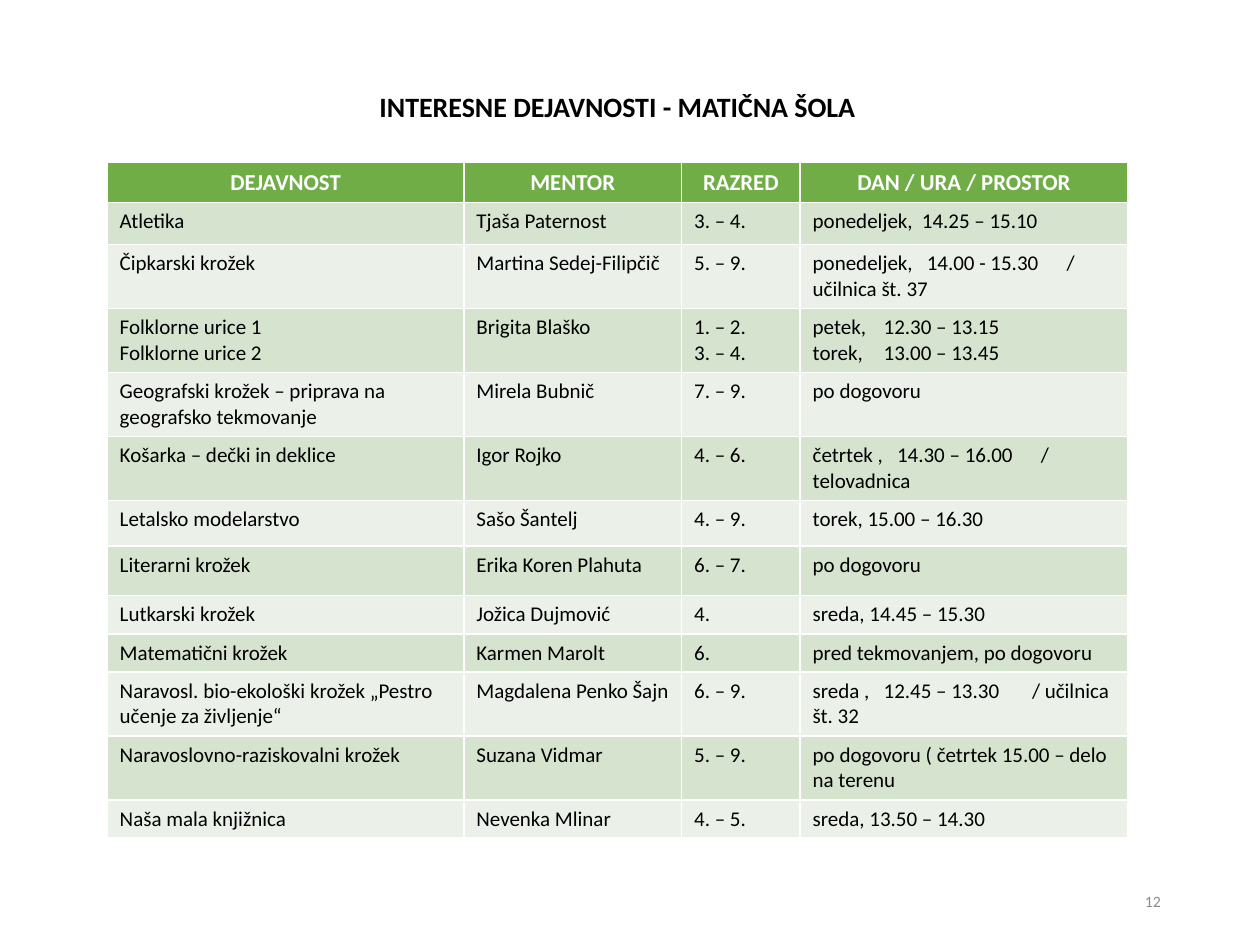
from lxml import etree
from pptx import Presentation
from pptx.dml.color import RGBColor
from pptx.enum import text
from pptx.oxml.ns import qn
from pptx.util import Cm, Pt

FONT = "Calibri"
BLACK = RGBColor(0x00, 0x00, 0x00)
WHITE = RGBColor(0xFF, 0xFF, 0xFF)
GREY = RGBColor(0x8C, 0x8C, 0x8C)
GREEN = RGBColor(0x70, 0xAD, 0x47)
BANDS = (RGBColor(0xEB, 0xF1, 0xE9), RGBColor(0xD5, 0xE3, 0xCF))

COLS = (7.19, 4.39, 2.39, 6.6)
HEAD = ("DEJAVNOST", "MENTOR", "RAZRED", "DAN / URA / PROSTOR")
ONE, TWO = 0.77, 1.29  # heights of rows with one and two lines

# Row height, the four cells, tab stops of the last cell
ROWS = (
    (0.84, ("Atletika", "Tjaša Paternost", "3. – 4.",
            "ponedeljek,\t14.25 – 15.10"), (2.2,)),
    (TWO, ("Čipkarski krožek", "Martina Sedej-Filipčič", "5. – 9.",
           "ponedeljek,\t14.00 - 15.30\t/ učilnica št. 37"), (2.3, 5.12)),
    (TWO, ("Folklorne urice 1\nFolklorne urice 2", "Brigita Blaško",
           "1. – 2.\n3. – 4.",
           "petek,\t12.30 – 13.15\ntorek,\t13.00 – 13.45"), (1.43,)),
    (TWO, ("Geografski krožek – priprava na geografsko tekmovanje",
           "Mirela Bubnič", "7. – 9.", "po dogovoru"), ()),
    (TWO, ("Košarka – dečki in deklice", "Igor Rojko", "4. – 6.",
           "četrtek ,\t14.30 – 16.00\t/ telovadnica"), (1.7, 4.6)),
    (0.92, ("Letalsko modelarstvo", "Sašo Šantelj", "4. – 9.",
            "torek, 15.00 – 16.30"), ()),
    (1.0, ("Literarni krožek", "Erika Koren Plahuta", "6. – 7.",
           "po dogovoru"), ()),
    (ONE, ("Lutkarski krožek", "Jožica Dujmović", "4.",
           "sreda, 14.45 – 15.30"), ()),
    (ONE, ("Matematični krožek", "Karmen Marolt", "6.",
           "pred tekmovanjem, po dogovoru"), ()),
    (TWO, ("Naravosl. bio-ekološki krožek „Pestro učenje za življenje“",
           "Magdalena Penko Šajn", "6. – 9.",
           "sreda ,\t12.45 – 13.30\t/ učilnica št. 32"), (1.43, 4.42)),
    (TWO, ("Naravoslovno-raziskovalni krožek", "Suzana Vidmar", "5. – 9.",
           "po dogovoru ( četrtek 15.00 – delo na terenu"), ()),
    (ONE, ("Naša mala knjižnica", "Nevenka Mlinar", "4. – 5.",
           "sreda, 13.50 – 14.30"), ()),
)


def write(frame, words, size, color, bold=False, align=text.PP_ALIGN.LEFT):
    frame.text = words
    for para in frame.paragraphs:
        para.alignment = align
        for run in para.runs:
            font = run.font
            font.name, font.size, font.bold = FONT, Pt(size), bold
            font.color.rgb = color


def add_tabs(frame, stops):
    for para in frame.paragraphs:
        tabs = etree.SubElement(para._p.get_or_add_pPr(), qn("a:tabLst"))
        for stop in stops:
            etree.SubElement(tabs, qn("a:tab"), pos=str(Cm(stop)), algn="l")


def add_label(slide, box, words, size, color, **style):
    frame = slide.shapes.add_textbox(*map(Cm, box)).text_frame
    frame.word_wrap = True
    write(frame, words, size, color, **style)
    return frame


def fill_row(table, index, cells, fill, *style, **more):
    for cell, words in zip(table.rows[index].cells, cells):
        cell.fill.solid()
        cell.fill.fore_color.rgb = fill
        write(cell.text_frame, words, *style, **more)


def add_plan(slide):
    """Table of activities: a green header above banded rows."""
    highs = [0.8] + [row[0] for row in ROWS]
    box = (2.16, 3.28, sum(COLS), sum(highs))
    table = slide.shapes.add_table(
        len(highs), len(COLS), *map(Cm, box)).table
    for col, width in zip(table.columns, COLS):
        col.width = Cm(width)
    for row, high in zip(table.rows, highs):
        row.height = Cm(high)
    fill_row(table, 0, HEAD, GREEN, 13, WHITE,
             bold=True, align=text.PP_ALIGN.CENTER)
    for i, (_, cells, stops) in enumerate(ROWS, 1):
        fill_row(table, i, cells, BANDS[i % 2], 12, BLACK)
        if stops:
            add_tabs(table.cell(i, 3).text_frame, stops)


def main():
    deck = Presentation()
    deck.slide_width, deck.slide_height = Cm(25.4), Cm(19.05)
    slide = deck.slides.add_slide(deck.slide_layouts[6])
    title = add_label(slide, (1.5, 1.75, 21.9, 1.12),
                      "INTERESNE DEJAVNOSTI - MATIČNA ŠOLA", 16, BLACK,
                      bold=True, align=text.PP_ALIGN.CENTER)
    title.paragraphs[0].line_spacing = 0.9
    add_plan(slide)
    number = add_label(slide, (17.93, 17.65, 5.72, 1.02), "12", 9, GREY,
                       align=text.PP_ALIGN.RIGHT)
    number.vertical_anchor = text.MSO_ANCHOR.MIDDLE
    deck.save("out.pptx")


if __name__ == "__main__":
    main()
